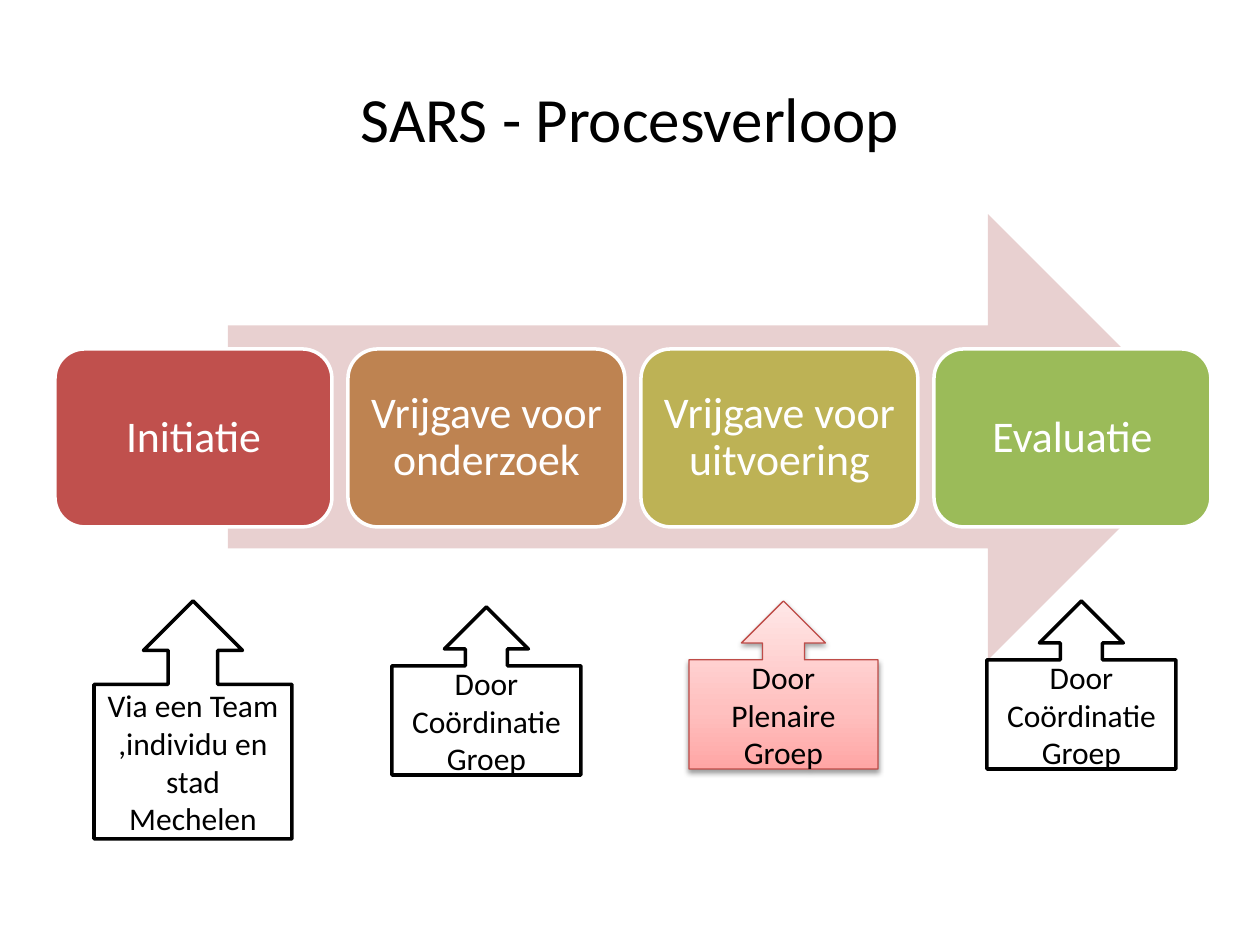
import copy

import pptx
import pptx.dml.color
import pptx.enum.shapes
import pptx.enum.text
import pptx.oxml
import pptx.oxml.ns
import pptx.util

PX = 914400 // 126
SHAPES = pptx.enum.shapes.MSO_SHAPE
STEP_FORMAT = {"size": pptx.util.Pt(25), "name": "Calibri"}
CALLOUT_FORMAT = {"size": pptx.util.Pt(18), "name": "Calibri"}
TITLE_FORMAT = {"size": pptx.util.Pt(36), "name": "Calibri"}


def rgb(value):
    return pptx.dml.color.RGBColor.from_string(value)


def write_text(shape, text, text_format, color):
    """Put one centred paragraph in the shape."""
    frame = shape.text_frame
    frame.word_wrap = True
    frame.vertical_anchor = pptx.enum.text.MSO_ANCHOR.MIDDLE
    paragraph = frame.paragraphs[0]
    paragraph.alignment = pptx.enum.text.PP_ALIGN.CENTER
    span = paragraph.add_run()
    span.text = text
    for name, value in text_format.items():
        setattr(span.font, name, value)
    span.font.color.rgb = rgb(color)


deck = pptx.Presentation()
deck.slide_width = pptx.util.Inches(10)
deck.slide_height = pptx.util.Inches(7.5)
page = deck.slides.add_slide(deck.slide_layouts[5])

# Title
title = page.shapes.title
title.left, title.top, title.width, title.height = [n * PX for n in (63, 38, 1134, 158)]
write_text(title, "SARS - Procesverloop", TITLE_FORMAT, "000000")

# Process arrow behind the steps
arrow = page.shapes.add_shape(SHAPES.RIGHT_ARROW, 228 * PX, 214 * PX, 983 * PX, 446 * PX)
arrow.shadow.inherit = False
arrow.fill.solid()
arrow.fill.fore_color.rgb = rgb("E8D0D0")
arrow.line.fill.background()

# Process steps
steps = [
    ("Initiatie", "C0504D"),
    ("Vrijgave voor onderzoek", "BE8351"),
    ("Vrijgave voor uitvoering", "BDB255"),
    ("Evaluatie", "9BBB59"),
]
for index, (text, color) in enumerate(steps):
    step = page.shapes.add_shape(
        SHAPES.ROUNDED_RECTANGLE, (55 + 293 * index) * PX, 349 * PX, 277 * PX, 178 * PX)
    step.shadow.inherit = False
    step.fill.solid()
    step.fill.fore_color.rgb = rgb(color)
    step.line.color.rgb = rgb("FFFFFF")
    step.line.width = pptx.util.Pt(2)
    write_text(step, text, STEP_FORMAT, "FFFFFF")
    step.text_frame.paragraphs[0].line_spacing = 0.9
    for side in ("left", "top", "right", "bottom"):
        setattr(step.text_frame, f"margin_{side}", 12 * PX)

# Who acts in each step
callouts = [
    ("Via een Team ,individu en stad Mechelen", 94, 601, 198, 238),
    ("Door Coördinatie Groep", 392, 607, 189, 168),
    ("Door Plenaire Groep", 689, 601, 189, 168),
    ("Door Coördinatie Groep", 987, 601, 189, 168),
]
for text, *place in callouts:
    callout = page.shapes.add_shape(SHAPES.UP_ARROW_CALLOUT, *[n * PX for n in place])
    callout.shadow.inherit = False
    write_text(callout, text, CALLOUT_FORMAT, "000000")
    if "Plenaire" not in text:
        callout.fill.solid()
        callout.fill.fore_color.rgb = rgb("FFFFFF")
        callout.line.color.rgb = rgb("000000")
        callout.line.width = pptx.util.Pt(2)
        continue

    # The plenary group stands out with a gradient and a shadow
    callout.line.color.rgb = rgb("BF4C48")
    callout.line.width = pptx.util.Pt(0.75)
    callout.fill.gradient()
    callout.fill.gradient_angle = 90
    properties = callout.element.spPr
    stop_list = properties.find(".//" + pptx.oxml.ns.qn("a:gsLst"))
    stop_list.insert(1, copy.deepcopy(stop_list[0]))
    gradient = [(0, "FFA6A5"), (0.35, "FFC0BF"), (1, "FFE7E7")]
    for stop, (position, color) in zip(callout.fill.gradient_stops, gradient):
        stop.position = position
        stop.color.rgb = rgb(color)
    properties.find(pptx.oxml.ns.qn("a:effectLst")).append(pptx.oxml.parse_xml(
        f'<a:outerShdw {pptx.oxml.ns.nsdecls("a")} blurRad="40000" dist="20000" '
        'dir="5400000" rotWithShape="0"><a:srgbClr val="000000">'
        '<a:alpha val="38000"/></a:srgbClr></a:outerShdw>'))

deck.save("out.pptx")
